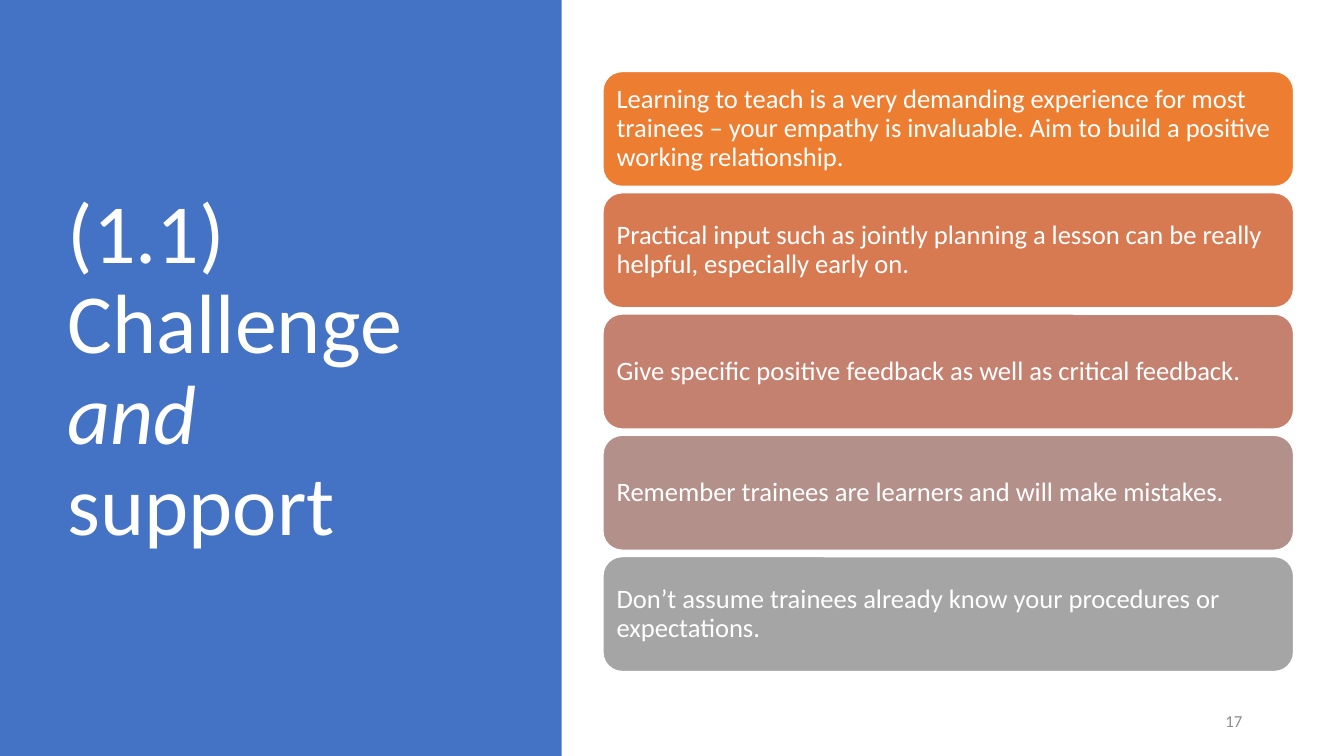
from pptx import Presentation
from pptx.dml.color import RGBColor
from pptx.enum.shapes import MSO_SHAPE
from pptx.enum.text import MSO_ANCHOR, MSO_AUTO_SIZE, PP_ALIGN
from pptx.util import Inches, Pt

RECTANGLE = MSO_SHAPE.RECTANGLE
ROUNDED = MSO_SHAPE.ROUNDED_RECTANGLE
MIDDLE = MSO_ANCHOR.MIDDLE
NO_AUTOFIT = MSO_AUTO_SIZE.NONE
LEFT, RIGHT = PP_ALIGN.LEFT, PP_ALIGN.RIGHT

TITLE_ONLY = 5
FONT = "Calibri"
COLOURS = {
    "white": "FFFFFF",
    "panel": "4472C4",
    "number": "8C8C8C",
    "orange": "ED7D31",
    "terracotta": "D87A51",
    "rose": "C48170",
    "mauve": "B4908B",
    "grey": "A5A5A5",
}
CARDS = [
    ("orange", "Learning to teach is a very demanding experience for most trainees – "
               "your empathy is invaluable. Aim to build a positive working relationship."),
    ("terracotta", "Practical input such as jointly planning a lesson can be really helpful, "
                   "especially early on."),
    ("rose", "Give specific positive feedback as well as critical feedback."),
    ("mauve", "Remember trainees are learners and will make mistakes."),
    ("grey", "Don’t assume trainees already know your procedures or expectations."),
]
CARD_LEFT, CARD_TOP = 5.98, 0.71
CARD_WIDTH, CARD_HEIGHT = 6.85, 1.14
CARD_PITCH = 1.203


def colour(name):
    return RGBColor.from_string(COLOURS[name])


def write_text(shape, runs, size, color="white", align=LEFT, line_spacing=0.9, margin=None):
    """Fill a shape with one paragraph; runs is a list of (text, italic) pairs."""
    frame = shape.text_frame
    frame.word_wrap = True
    frame.auto_size = NO_AUTOFIT
    frame.vertical_anchor = MIDDLE
    if margin is not None:
        frame.margin_left = frame.margin_right = Inches(margin)
        frame.margin_top = frame.margin_bottom = Inches(margin)
    paragraph = frame.paragraphs[0]
    paragraph.alignment = align
    paragraph.line_spacing = line_spacing
    for text, italic in runs:
        run = paragraph.add_run()
        run.text = text
        run.font.name = FONT
        run.font.size = Pt(size)
        run.font.italic = italic
        run.font.color.rgb = colour(color)


def add_box(slide, kind, left, top, width, height, fill, outline=None):
    shape = slide.shapes.add_shape(kind, Inches(left), Inches(top), Inches(width), Inches(height))
    shape.shadow.inherit = False
    shape.fill.solid()
    shape.fill.fore_color.rgb = colour(fill)
    if outline:
        shape.line.color.rgb = colour(outline)
        shape.line.width = Pt(1)
    else:
        shape.line.fill.background()
    return shape


def add_title_panel(slide):
    panel = add_box(slide, RECTANGLE, 0, 0, 5.57, 7.5, "panel")
    title = slide.shapes.title
    title.element.addprevious(panel.element)  # the panel lies behind the title
    title.left, title.top = Inches(0.57), Inches(0.68)
    title.width, title.height = Inches(4.16), Inches(6.02)
    write_text(title, [("(1.1) Challenge ", False), ("and ", True), ("support", False)], size=60)


def add_slide_number(slide, number):
    box = slide.shapes.add_textbox(Inches(9.42), Inches(6.95), Inches(3), Inches(0.4))
    write_text(box, [(number, False)], size=12, color="number", align=RIGHT, line_spacing=1)


def add_cards(slide):
    for index, (fill, text) in enumerate(CARDS):
        top = CARD_TOP + index * CARD_PITCH
        card = add_box(slide, ROUNDED, CARD_LEFT, top, CARD_WIDTH, CARD_HEIGHT, fill, "white")
        write_text(card, [(text, False)], size=19, margin=0.08)


def main():
    presentation = Presentation()
    presentation.slide_width = Inches(13.33)
    presentation.slide_height = Inches(7.5)
    slide = presentation.slides.add_slide(presentation.slide_layouts[TITLE_ONLY])
    add_title_panel(slide)
    add_slide_number(slide, "17")
    add_cards(slide)
    presentation.save("out.pptx")


if __name__ == "__main__":
    main()
